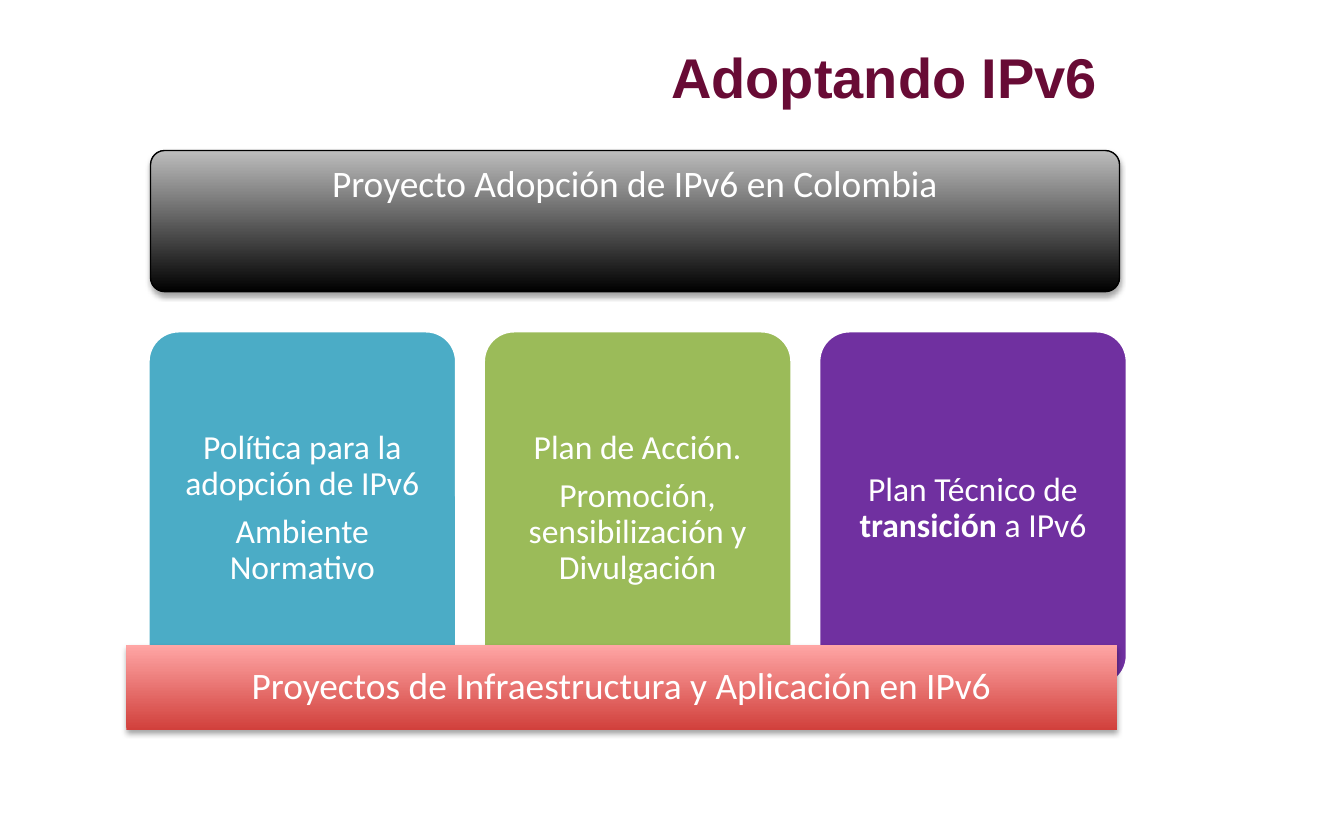
from lxml import etree
from pptx import Presentation
from pptx.dml.color import RGBColor
from pptx.enum.shapes import MSO_SHAPE
from pptx.enum.text import MSO_ANCHOR, MSO_AUTO_SIZE, PP_ALIGN
from pptx.oxml.ns import qn
from pptx.util import Inches, Pt

ROUND, RECT = MSO_SHAPE.ROUNDED_RECTANGLE, MSO_SHAPE.RECTANGLE
TOP, MIDDLE = MSO_ANCHOR.TOP, MSO_ANCHOR.MIDDLE
CENTER = PP_ALIGN.CENTER
NO_FIT = MSO_AUTO_SIZE.NONE

WINE = RGBColor(0x68, 0x0B, 0x35)
WHITE = RGBColor(0xFF, 0xFF, 0xFF)
BLACK = RGBColor(0x00, 0x00, 0x00)
GRAY = RGBColor(0xBD, 0xBD, 0xBD)
TEAL = RGBColor(0x4B, 0xAC, 0xC6)
GREEN = RGBColor(0x9B, 0xBB, 0x59)
PURPLE = RGBColor(0x70, 0x30, 0xA0)
RED = RGBColor(0xD1, 0x40, 0x3C)
PINK = RGBColor(0xFF, 0xA6, 0xA5)

# Each pillar: fill and paragraphs; text between asterisks is bold
PILLARS = [
    (TEAL, ["Política para la adopción de IPv6", "Ambiente Normativo"]),
    (GREEN, ["Plan de Acción.", "Promoción, sensibilización y Divulgación"]),
    (PURPLE, ["Plan Técnico de *transición* a IPv6"]),
]
GAP = 0.195


def add_box(slide, kind, box):
    shape = slide.shapes.add_shape(kind, *map(Inches, box))
    shape.shadow.inherit = False
    if kind == ROUND:
        shape.adjustments[0] = 0.1
    return shape


def blend(shape, low, high):
    """Fill with a gradient rising from low to high, and cast a shadow."""
    shape.fill.gradient()
    shape.fill.gradient_angle = 90
    for stop, color in zip(shape.fill.gradient_stops, (low, high)):
        stop.color.rgb = color
    effects = shape._element.spPr.find(qn("a:effectLst"))
    shadow = etree.SubElement(
        effects, qn("a:outerShdw"), blurRad=str(Pt(3.1)), dist=str(Pt(1.8)),
        dir="5400000", rotWithShape="0")
    color = etree.SubElement(shadow, qn("a:srgbClr"), val=str(BLACK))
    etree.SubElement(color, qn("a:alpha"), val="35000")


def write(shape, lines, size, inset, anchor=MIDDLE):
    frame = shape.text_frame
    frame.word_wrap = True
    frame.vertical_anchor = anchor
    frame.margin_left = frame.margin_right = Inches(inset)
    frame.margin_top = frame.margin_bottom = Inches(inset)
    frame.text = "\n".join(lines)
    for para, line in zip(frame.paragraphs, lines):
        para.alignment = CENTER
        para.line_spacing = 0.9
        para.space_after = Pt(0.35 * size)
        para.clear()
        for i, part in enumerate(line.split("*")):
            run = para.add_run()
            run.text = part
            run.font.name = "Calibri"
            run.font.size = Pt(size)
            run.font.bold = i % 2 == 1
            run.font.color.rgb = WHITE


def add_title(slide, box):
    title = slide.shapes.title
    title.left, title.top, title.width, title.height = map(Inches, box)
    frame = title.text_frame
    frame.text = "Adoptando IPv6"
    frame.word_wrap = True
    frame.auto_size = NO_FIT
    frame.vertical_anchor = TOP
    para = frame.paragraphs[0]
    para.alignment = CENTER
    para.line_spacing = 0.7
    font = para.runs[0].font
    font.name = "Arial"
    font.size = Pt(30)
    font.bold = True
    font.color.rgb = WINE


def add_roof(slide, box):
    roof = add_box(slide, ROUND, box)
    blend(roof, BLACK, GRAY)
    roof.line.color.rgb = BLACK
    roof.line.width = Pt(0.75)
    write(roof, ["Proyecto Adopción de IPv6 en Colombia"], 20, 0.08, TOP)


def add_pillars(slide, box):
    left, top, width, height = box
    count = len(PILLARS)
    each = (width - GAP * (count - 1)) / count
    for i, (color, lines) in enumerate(PILLARS):
        pillar = add_box(slide, ROUND,
                         (left + i * (each + GAP), top, each, height))
        pillar.fill.solid()
        pillar.fill.fore_color.rgb = color
        pillar.line.color.rgb = WHITE
        pillar.line.width = Pt(2)
        write(pillar, lines, 18, 0.07)


def add_base(slide, box):
    base = add_box(slide, RECT, box)
    blend(base, RED, PINK)
    base.line.fill.background()
    write(base, ["Proyectos de Infraestructura y Aplicación en IPv6"], 20, 0.1)


def main():
    deck = Presentation()
    deck.slide_width, deck.slide_height = Inches(10), Inches(6.25)
    slide = deck.slides.add_slide(deck.slide_layouts[5])
    add_title(slide, (3.29, 0.4, 6.58, 0.46))
    add_roof(slide, (1.12, 1.12, 7.21, 1.05))
    add_pillars(slide, (1.1, 2.46, 7.29, 2.65))
    add_base(slide, (0.94, 4.8, 7.37, 0.63))
    deck.save("out.pptx")


if __name__ == "__main__":
    main()
